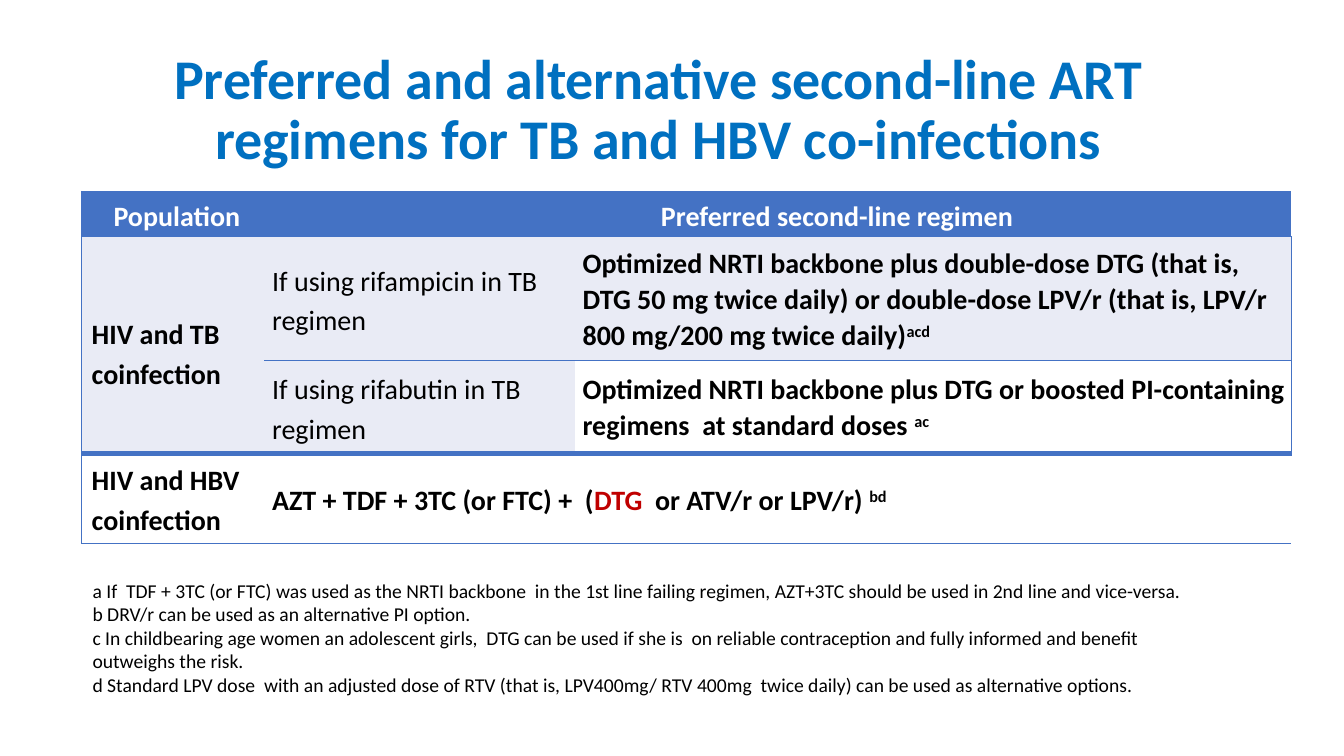
from dataclasses import dataclass

import pptx
import pptx.dml.color
import pptx.enum.text
import pptx.oxml
import pptx.oxml.ns
import pptx.util

Pt = pptx.util.Pt
ALIGN = pptx.enum.text.PP_ALIGN
MIDDLE = pptx.enum.text.MSO_ANCHOR.MIDDLE

FONT = "Calibri"
BLUE, PALE, WHITE, BLACK = "4472C4", "E9EBF5", "FFFFFF", "000000"
TITLE_BLUE, RED = "0070C0", "C00000"
PLAIN_STYLE = "{2D5ABB26-0587-4C30-8999-92F81FD0307C}"

COLUMN_WIDTHS = (130.3, 221.8, 511.9)
ROW_HEIGHTS = (32.4, 88.6, 66.2, 64.1)
RULE_WIDTHS = (1, 1, 1, 4, 1)  # horizontal rules, top to bottom


@dataclass(frozen=True)
class Span:
    text: str
    color: str = BLACK
    bold: bool = True
    raised: bool = False


@dataclass(frozen=True)
class Cell:
    row: int
    column: int
    paragraphs: tuple[tuple[Span, ...], ...]
    fill: str
    indent: float = 5.8
    top: float = 0
    align: ALIGN = ALIGN.LEFT
    line_spacing: float = 1.15
    end: tuple[int, int] | None = None  # last row and column of a merged cell


CELLS = (
    Cell(0, 0, ((Span("Population", WHITE),),), BLUE, align=ALIGN.CENTER),
    Cell(0, 1, ((Span("Preferred second-line regimen", WHITE),),), BLUE, 85,
         align=ALIGN.CENTER, end=(0, 2)),
    Cell(1, 0, ((Span("HIV and TB"),), (Span("coinfection"),)), PALE, 7.2, 10,
         end=(2, 0)),
    Cell(1, 1, ((Span("If using rifampicin in TB regimen", bold=False),),), PALE),
    Cell(1, 2, ((Span("Optimized NRTI backbone plus double-dose DTG (that is, "
                      "DTG 50 mg twice daily) or double-dose LPV/r (that is, "
                      "LPV/r 800 mg/200 mg twice daily)"),
                 Span("acd", raised=True)),), PALE, line_spacing=1.06),
    Cell(2, 1, ((Span("If using rifabutin in TB regimen", bold=False),),), PALE),
    Cell(2, 2, ((Span("Optimized NRTI backbone plus DTG or boosted "
                      "PI-containing regimens  at standard doses "),
                 Span("ac", raised=True)),), WHITE, line_spacing=1.06),
    Cell(3, 0, ((Span("HIV and HBV"),), (Span("coinfection"),)), WHITE, 7.2),
    Cell(3, 1, ((Span("AZT + TDF + 3TC (or FTC) +  ("), Span("DTG", RED),
                 Span("  or ATV/r or LPV/r) "), Span("bd", raised=True)),),
         WHITE, end=(3, 2)),
)

FOOTNOTES = (
    "a If  TDF + 3TC (or FTC) was used as the NRTI backbone  in the 1st line "
    "failing regimen, AZT+3TC should be used in 2nd line and vice-versa.",
    "b DRV/r can be used as an alternative PI option.",
    "c In childbearing age women an adolescent girls,  DTG can be used if she is  "
    "on reliable contraception and fully informed and benefit outweighs the risk.",
    "d Standard LPV dose  with an adjusted dose of RTV (that is, LPV400mg/ RTV "
    "400mg  twice daily) can be used as alternative options.",
)


def rgb(color: str) -> pptx.dml.color.RGBColor:
    return pptx.dml.color.RGBColor.from_string(color)


def add_span(para, span: Span, size: float) -> None:
    run = para.add_run()
    run.text = span.text
    run.font.name = FONT
    run.font.size = Pt(size)
    run.font.bold = span.bold
    run.font.color.rgb = rgb(span.color)
    if span.raised:
        run.font._element.set("baseline", "30000")


def get_paragraph(frame, index: int):
    return frame.paragraphs[0] if index == 0 else frame.add_paragraph()


def add_border(table_cell, side: str, width: float) -> None:
    namespace = pptx.oxml.ns.nsdecls("a")
    table_cell._tc.get_or_add_tcPr().append(pptx.oxml.parse_xml(
        f'<a:ln{side} {namespace} w="{Pt(width)}"><a:solidFill>'
        f'<a:srgbClr val="{BLUE}"/></a:solidFill></a:ln{side}>'))


def draw_borders(table) -> None:
    for row in range(len(ROW_HEIGHTS)):
        for column in range(len(COLUMN_WIDTHS)):
            table_cell = table.cell(row, column)
            if column == 0:
                add_border(table_cell, "L", 1)
            if column == len(COLUMN_WIDTHS) - 1:
                add_border(table_cell, "R", 1)
            # The first column has no rule inside its merged cell
            if (row, column) != (2, 0):
                add_border(table_cell, "T", RULE_WIDTHS[row])
            if (row, column) != (1, 0):
                add_border(table_cell, "B", RULE_WIDTHS[row + 1])


def fill_cell(table, cell: Cell) -> None:
    table_cell = table.cell(cell.row, cell.column)
    if cell.end:
        table_cell.merge(table.cell(*cell.end))
    table_cell.fill.solid()
    table_cell.fill.fore_color.rgb = rgb(cell.fill)
    table_cell.vertical_anchor = MIDDLE
    table_cell.margin_left, table_cell.margin_top = Pt(cell.indent), Pt(cell.top)
    table_cell.margin_right = table_cell.margin_bottom = Pt(0)
    for index, spans in enumerate(cell.paragraphs):
        para = get_paragraph(table_cell.text_frame, index)
        para.alignment = cell.align
        para.line_spacing = cell.line_spacing
        para.space_before = Pt(0.7 if index else 3.8)
        for span in spans:
            add_span(para, span, 20)


def add_title(page) -> None:
    title = page.shapes.title
    title.left, title.top = Pt(46.1), Pt(25.9)
    title.width, title.height = Pt(848.2), Pt(107.3)
    frame = title.text_frame
    frame.vertical_anchor = MIDDLE
    para = frame.paragraphs[0]
    para.alignment = ALIGN.CENTER
    para.line_spacing = 0.9
    add_span(para, Span("Preferred and alternative second-line ART regimens "
                        "for TB and HBV co-infections", TITLE_BLUE), 40)


def add_regimen_table(page) -> None:
    table = page.shapes.add_table(
        len(ROW_HEIGHTS), len(COLUMN_WIDTHS), Pt(58.3), Pt(136.8),
        Pt(sum(COLUMN_WIDTHS)), Pt(sum(ROW_HEIGHTS))).table
    table.horz_banding = table.first_row = False
    table._tbl.tblPr.find(pptx.oxml.ns.qn("a:tableStyleId")).text = PLAIN_STYLE
    for column, width in zip(table.columns, COLUMN_WIDTHS):
        column.width = Pt(width)
    for row, height in zip(table.rows, ROW_HEIGHTS):
        row.height = Pt(height)
    draw_borders(table)
    for cell in CELLS:
        fill_cell(table, cell)


def add_footnotes(page) -> None:
    box = page.shapes.add_textbox(Pt(59), Pt(409.7), Pt(798.5), Pt(92.2))
    frame = box.text_frame
    frame.word_wrap = True
    for index, note in enumerate(FOOTNOTES):
        add_span(get_paragraph(frame, index), Span(note, bold=False), 14)


def main() -> None:
    deck = pptx.Presentation()
    deck.slide_width, deck.slide_height = Pt(960), Pt(540)
    page = deck.slides.add_slide(deck.slide_layouts[5])
    add_title(page)
    add_regimen_table(page)
    add_footnotes(page)
    deck.save("out.pptx")


if __name__ == "__main__":
    main()
